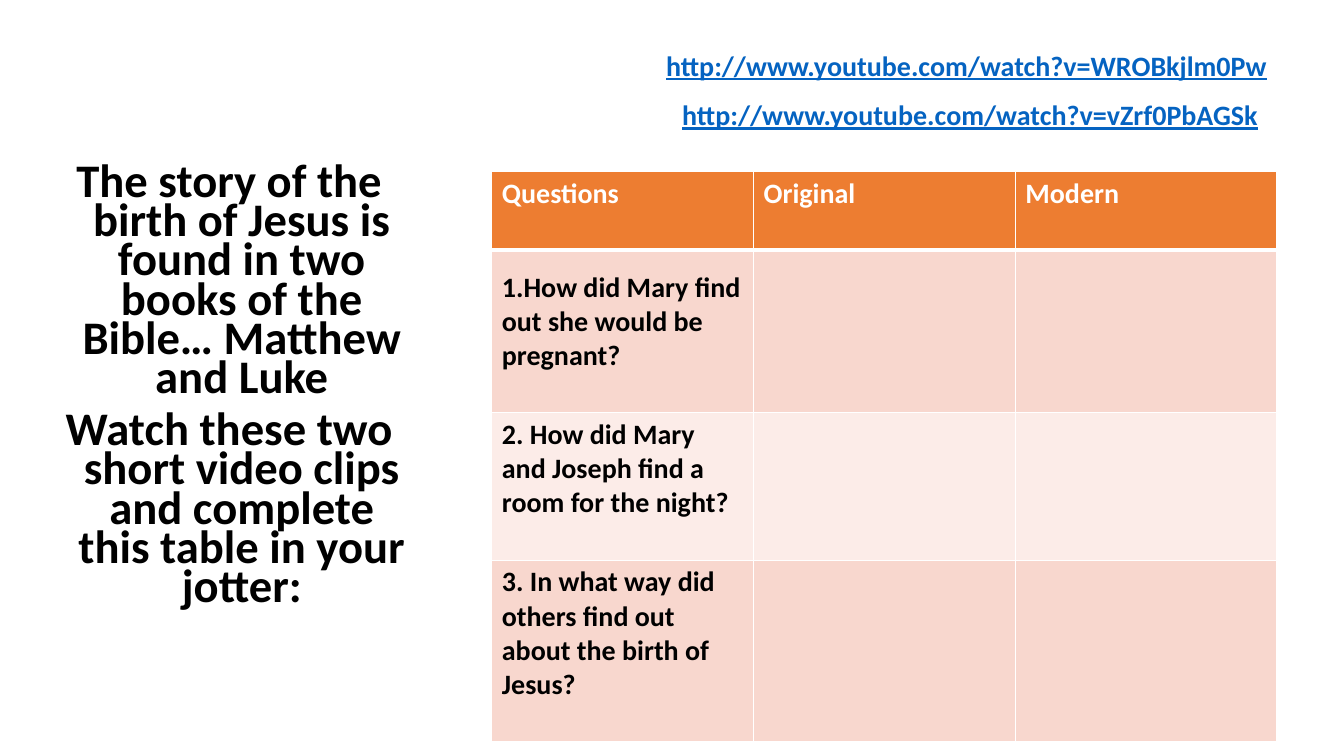
from lxml import etree
from pptx import Presentation
from pptx.dml.color import RGBColor
from pptx.enum.shapes import MSO_SHAPE
from pptx.enum.text import MSO_ANCHOR, PP_ALIGN
from pptx.oxml.ns import qn
from pptx.util import Pt

RECT = MSO_SHAPE.RECTANGLE
TOP = MSO_ANCHOR.TOP
LEFT, CENTER, RIGHT = PP_ALIGN.LEFT, PP_ALIGN.CENTER, PP_ALIGN.RIGHT
WHITE = RGBColor(0xFF, 0xFF, 0xFF)
BLACK = RGBColor(0, 0, 0)
BLUE = RGBColor(0x05, 0x63, 0xC1)
ORANGE = RGBColor(0xED, 0x7D, 0x31)
ROSE = RGBColor(0xF8, 0xD7, 0xCE)
PALE = RGBColor(0xFC, 0xEC, 0xE8)

STORY = [
    "The story of the birth of Jesus is found in two books of the Bible… Matthew and Luke",
    "Watch these two short video clips and complete this table in your jotter:",
]
LINKS = [
    "http://www.youtube.com/watch?v=WROBkjlm0Pw",
    "http://www.youtube.com/watch?v=vZrf0PbAGSk",
]
HEADS = ["Questions", "Original", "Modern"]
ASKS = [
    "How did Mary find out she would be pregnant?",
    "2. How did Mary and Joseph find a room for the night?",
    "3. In what way did others find out about the birth of Jesus?",
]
HIGHS = [56, 116, 105.6, 129.6]
FILLS = [ORANGE, ROSE, PALE, ROSE]


class Deck:
    font = "Calibri"
    alpha = 80000

    def __init__(self, slide):
        self.slide = slide

    def run(self, para, text, size, color, line=False):
        run = para.add_run()
        run.text = text
        font = run.font
        font.name, font.size, font.bold = self.font, Pt(size), True
        font.underline = line
        font.color.rgb = color

    def panel(self, x, y, w, h):
        shape = self.slide.shapes.add_shape(RECT, Pt(x), Pt(y), Pt(w), Pt(h))
        shape.shadow.inherit = False
        shape.line.fill.background()
        shape.fill.solid()
        shape.fill.fore_color.rgb = WHITE
        tint = shape._element.spPr.find(qn("a:solidFill"))[0]
        etree.SubElement(tint, qn("a:alpha"), val=str(self.alpha))
        frame = shape.text_frame
        frame.word_wrap = True
        frame.vertical_anchor = TOP
        return frame

    def para(self, frame, index, align, space, gap):
        para = frame.add_paragraph() if index else frame.paragraphs[0]
        para.alignment = align
        para.line_spacing = space
        para.space_before = Pt(gap if index else 0)
        return para

    def hang(self, para, size):
        props = para._p.get_or_add_pPr()
        props.set("marL", str(Pt(size)))
        props.set("indent", str(-Pt(size)))

    def number(self, para):
        props = para._p.get_or_add_pPr()
        etree.SubElement(props, qn("a:buFont"), typeface="+mj-lt")
        etree.SubElement(props, qn("a:buAutoNum"), type="arabicPeriod")

    def edge(self, cell, side, width):
        line = etree.SubElement(cell._tc.get_or_add_tcPr(), qn("a:ln" + side), w=str(Pt(width)))
        fill = etree.SubElement(line, qn("a:solidFill"))
        etree.SubElement(fill, qn("a:srgbClr"), val=str(WHITE))

    def table(self, x, y, wide, highs, rows, fills):
        count = len(rows[0])
        shape = self.slide.shapes.add_table(
            len(rows), count, Pt(x), Pt(y), Pt(wide * count), Pt(sum(highs)))
        table = shape.table
        table.horz_banding = False
        for col in table.columns:
            col.width = Pt(wide)
        for r, (high, row, fill) in enumerate(zip(highs, rows, fills)):
            table.rows[r].height = Pt(high)
            for c, text in enumerate(row):
                cell = table.cell(r, c)
                for side in "LRTB":
                    heavy = (r, side) in ((0, "B"), (1, "T"))
                    self.edge(cell, side, 3 if heavy else 1)
                cell.fill.solid()
                cell.fill.fore_color.rgb = fill
                if text:
                    para = cell.text_frame.paragraphs[0]
                    para.alignment = LEFT
                    self.run(para, text, 20, BLACK if r else WHITE)
        return table


def main():
    show = Presentation()
    show.slide_width, show.slide_height = Pt(960), Pt(540)
    deck = Deck(show.slides.add_slide(show.slide_layouts[6]))

    story = deck.panel(30.25, 115.2, 267, 342.7)
    for i, text in enumerate(STORY):
        para = deck.para(story, i, CENTER, 0.7, 9.4)
        deck.hang(para, 18)
        deck.run(para, text, 33.3, BLACK)

    rows = [HEADS] + [[ask, "", ""] for ask in ASKS]
    table = deck.table(351.3, 122.5, 187, HIGHS, rows, FILLS)
    first = table.cell(1, 0)
    first.margin_top = Pt(14.8)
    deck.number(first.text_frame.paragraphs[0])

    links = deck.panel(462, 35.6, 450, 68.4)
    for i, text in enumerate(LINKS):
        para = deck.para(links, i, RIGHT, 0.8, 10)
        deck.run(para, text, 20, BLUE, True)
    deck.run(para, " ", 28, BLACK)

    show.save("out.pptx")


if __name__ == "__main__":
    main()
